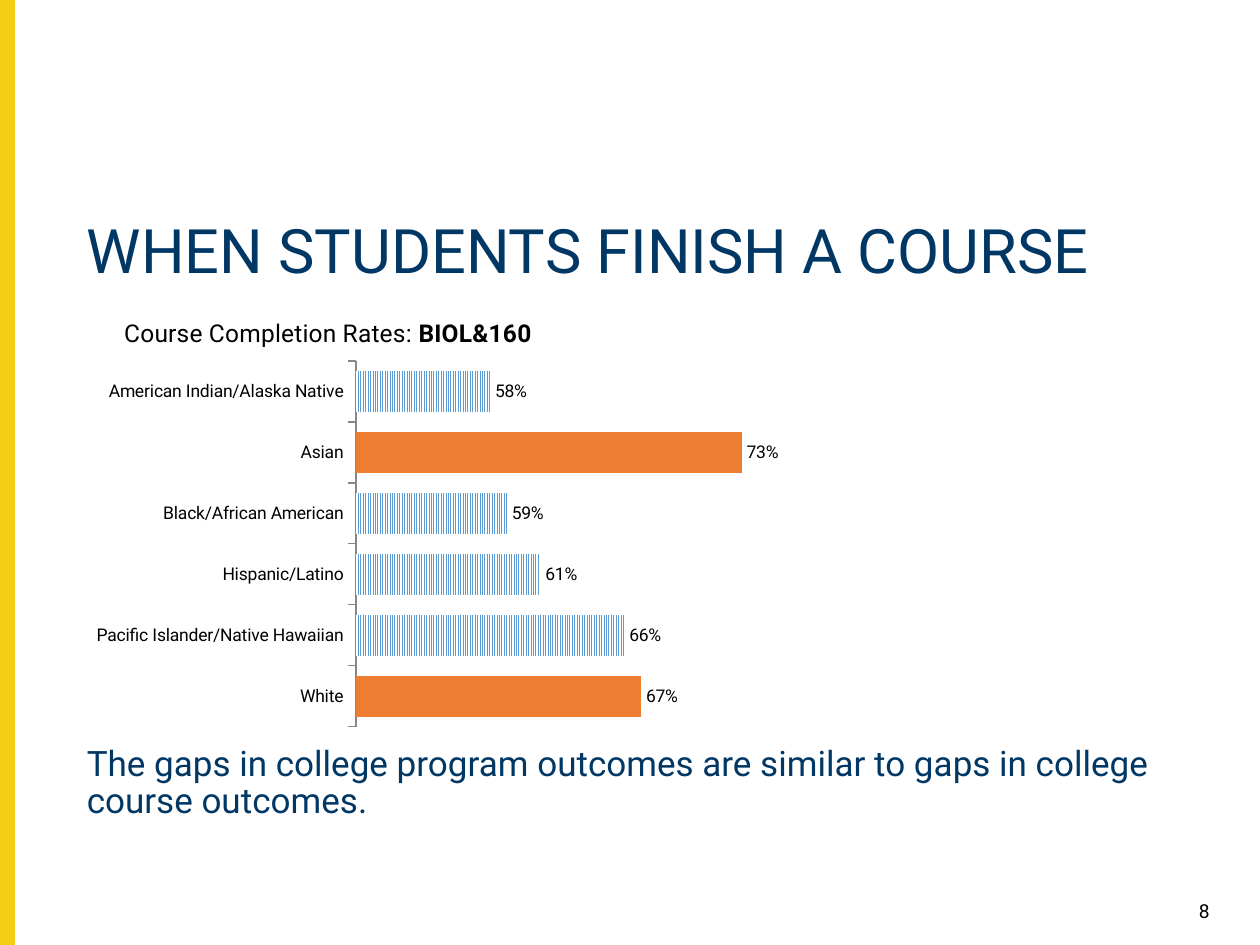
import pptx
import pptx.chart.data
import pptx.dml.color
import pptx.enum.chart
import pptx.enum.dml
import pptx.enum.shapes
import pptx.enum.text
import pptx.util
from lxml import etree
from pptx.util import Inches, Pt

RGBColor = pptx.dml.color.RGBColor
YELLOW = RGBColor(0xF4, 0xCE, 0x12)
NAVY = RGBColor(0x00, 0x37, 0x64)
BLACK = RGBColor(0x00, 0x00, 0x00)
WHITE = RGBColor(0xFF, 0xFF, 0xFF)
BLUE = RGBColor(0x5B, 0x9B, 0xD5)
ORANGE = RGBColor(0xED, 0x7D, 0x31)
GRAY = RGBColor(0x87, 0x87, 0x87)

FONT = "Roboto"
WIDTH, HEIGHT = Inches(10), Inches(7.5)
LEFT, CONTENT_WIDTH = Inches(0.59), Inches(9.12)

COMPLETION_RATES = {
    "American Indian/Alaska Native": 0.58,
    "Asian": 0.73,
    "Black/African American": 0.59,
    "Hispanic/Latino": 0.61,
    "Pacific Islander/Native Hawaiian": 0.66,
    "White": 0.67,
}
HIGHLIGHTED = ("Asian", "White")


def set_font(font, size, color):
    font.name = FONT
    font.size = Pt(size)
    font.color.rgb = color


def add_side_bar(slide, left, top, width, height):
    bar = slide.shapes.add_shape(
        pptx.enum.shapes.MSO_SHAPE.RECTANGLE, left, top, width, height)
    bar.shadow.inherit = False
    bar.fill.solid()
    bar.fill.fore_color.rgb = YELLOW
    bar.line.color.rgb = YELLOW
    bar.line.width = Pt(1)


def add_text(slide, box, text, size, color, line_spacing=None, alignment=None):
    frame = slide.shapes.add_textbox(*box).text_frame
    frame.word_wrap = True
    paragraph = frame.paragraphs[0]
    paragraph.text = text
    paragraph.line_spacing = line_spacing
    paragraph.alignment = alignment
    set_font(paragraph.font, size, color)


def make_layout(parent, **shares):
    """Build a manual layout from shares of the chart's size."""
    namespace = parent.nsmap["c"]
    layout = etree.Element(f"{{{namespace}}}layout")
    manual = etree.SubElement(layout, f"{{{namespace}}}manualLayout")
    for name, value in shares.items():
        etree.SubElement(manual, f"{{{namespace}}}{name}").set("val", str(value))
    return layout


def add_chart_title(chart):
    paragraph = chart.chart_title.text_frame.paragraphs[0]
    paragraph.add_run().text = "Course Completion Rates: "
    course = paragraph.add_run()
    course.text = "BIOL&160"
    for run in paragraph.runs:
        set_font(run.font, 14, BLACK)
        run.font.bold = run is course or run.text == course.text
    chart.chart_title.include_in_layout = False
    title = chart.chart_title._element
    for old in title.findall("c:layout", title.nsmap):
        title.remove(old)
    title.find("c:tx", title.nsmap).addnext(
        make_layout(title, xMode="edge", yMode="edge", x=0.04, y=0.04))


def color_bars(series):
    for index, category in enumerate(COMPLETION_RATES):
        fill = series.points[index].format.fill
        if category in HIGHLIGHTED:
            fill.solid()
            fill.fore_color.rgb = ORANGE
        else:
            fill.patterned()
            fill.pattern = pptx.enum.dml.MSO_PATTERN.NARROW_VERTICAL
            fill.fore_color.rgb = BLUE
            fill.back_color.rgb = WHITE


def add_rates_chart(slide, left, top, width, height):
    data = pptx.chart.data.CategoryChartData(number_format="0%")
    data.categories = list(COMPLETION_RATES)
    data.add_series("Series 1", list(COMPLETION_RATES.values()))
    chart = slide.shapes.add_chart(
        pptx.enum.chart.XL_CHART_TYPE.BAR_CLUSTERED,
        left, top, width, height, data).chart
    set_font(chart.font, 10, BLACK)
    chart.has_legend = False
    add_chart_title(chart)

    # Axes
    chart.category_axis.reverse_order = True
    chart.category_axis.major_tick_mark = pptx.enum.chart.XL_TICK_MARK.OUTSIDE
    chart.category_axis.format.line.color.rgb = GRAY
    chart.value_axis.minimum_scale = 0.5
    chart.value_axis.maximum_scale = 1
    chart.value_axis.has_major_gridlines = False
    chart.value_axis.visible = False

    # Bars and labels
    plot = chart.plots[0]
    plot.gap_width = 50
    plot.vary_by_categories = False
    color_bars(plot.series[0])
    plot.has_data_labels = True
    labels = plot.data_labels
    labels.show_value = True
    labels.number_format = "0%"
    labels.number_format_is_linked = False
    labels.position = pptx.enum.chart.XL_LABEL_POSITION.OUTSIDE_END
    set_font(labels.font, 10, BLACK)

    # Plot area
    area = chart._chartSpace.chart.plotArea
    for old in area.findall("c:layout", area.nsmap):
        area.remove(old)
    area.insert(0, make_layout(
        area, layoutTarget="inner", xMode="edge", yMode="edge",
        x=0.245, y=0.15, w=0.73, h=0.83))


def build_slide(presentation):
    slide = presentation.slides.add_slide(presentation.slide_layouts[6])
    add_side_bar(slide, 0, 0, Inches(0.11), HEIGHT)
    add_text(slide, (LEFT, Inches(1.7), CONTENT_WIDTH, Inches(0.87)),
             "WHEN STUDENTS FINISH A COURSE", 35, NAVY, line_spacing=0.9)
    add_rates_chart(slide, LEFT, Inches(2.34), CONTENT_WIDTH, Inches(3.5))
    add_text(slide, (LEFT, Inches(5.87), CONTENT_WIDTH, Inches(1.05)),
             "The gaps in college program outcomes are similar to gaps in "
             "college course outcomes.", 20, NAVY, line_spacing=0.9)
    add_text(slide, (Inches(9.19), Inches(7.09), Inches(0.51), Inches(0.26)),
             "8", 11, BLACK, alignment=pptx.enum.text.PP_ALIGN.RIGHT)


def main():
    presentation = pptx.Presentation()
    presentation.slide_width, presentation.slide_height = WIDTH, HEIGHT
    build_slide(presentation)
    presentation.save("out.pptx")


if __name__ == "__main__":
    main()
